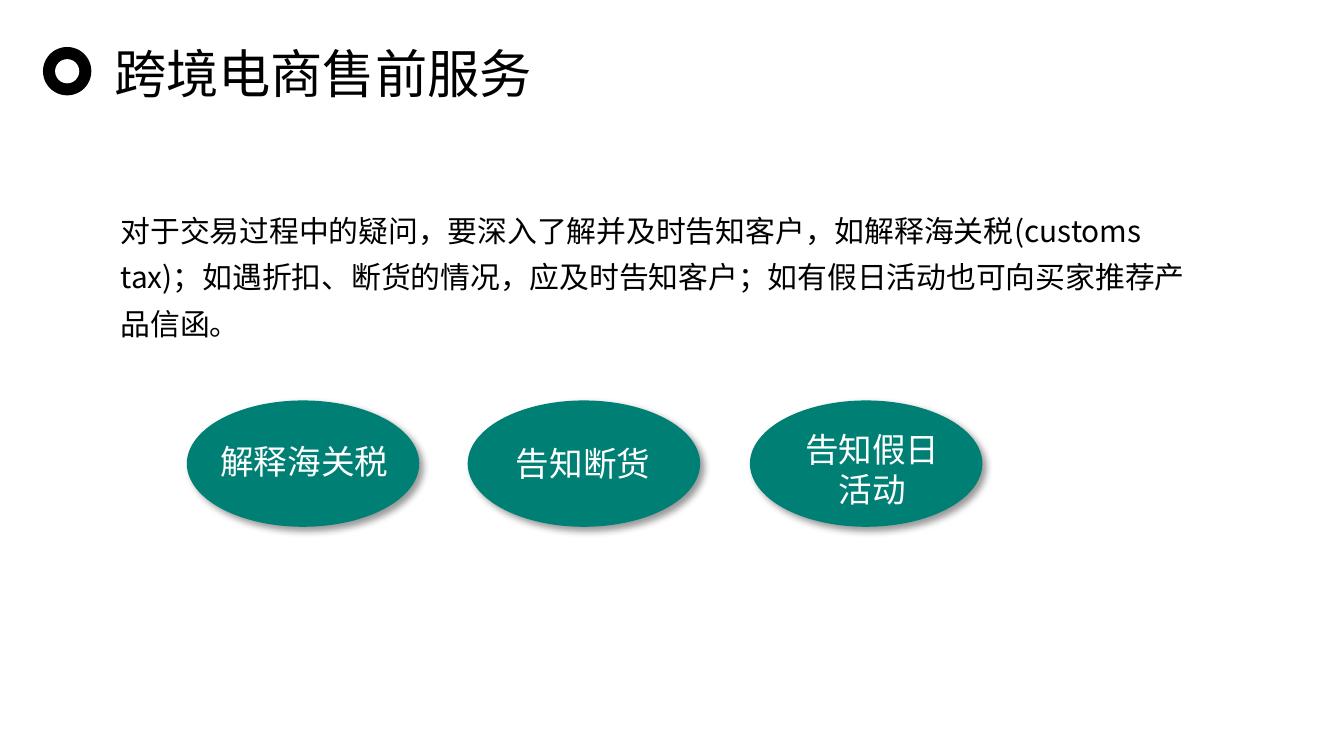
from lxml import etree
from pptx import Presentation
from pptx.dml.color import RGBColor
from pptx.enum.shapes import MSO_SHAPE
from pptx.enum.text import MSO_ANCHOR, MSO_AUTO_SIZE, PP_ALIGN
from pptx.oxml.ns import qn
from pptx.util import Inches, Pt

OVAL = MSO_SHAPE.OVAL
TOP = MSO_ANCHOR.TOP
FIXED = MSO_AUTO_SIZE.NONE
LEFT, MID = PP_ALIGN.LEFT, PP_ALIGN.CENTER
BLACK = RGBColor(0, 0, 0)
WHITE = RGBColor(255, 255, 255)
TEAL = RGBColor(0, 128, 117)
FACE = "Noto Sans CJK SC"
WIDE = Inches(10)
HIGH = WIDE * 9 // 16
COLS = 1000
CELL = WIDE // COLS

TITLE = "跨境电商售前服务"
BODY = (
    "对于交易过程中的疑问，要深入了解并及时告知客户，如解释海关税(customs tax)；"
    "如遇折扣、断货的情况，应及时告知客户；如有假日活动也可向买家推荐产品信函。"
)
TOPICS = [
    ("解释海关税", (15, 25, 149, 40), LEFT),
    ("告知断货", (26, 27, 124, 40), LEFT),
    ("告知假日活动", (29, 16, 124, 71), MID),
]


def shift(box, part):
    """Move a part, given in grid cells, to the corner of its box."""
    return box[0] + part[0], box[1] + part[1], part[2], part[3]


def scale(box):
    """Turn grid cells into slide lengths."""
    return [n * CELL for n in box]


def write(shape, text, size, color, align=LEFT, wrap=True, space=1.0):
    """Fill a shape with one styled paragraph."""
    frame = shape.text_frame
    frame.text = text
    para = frame.paragraphs[0]
    run = para.runs[0]
    formats = [
        (frame, {"word_wrap": wrap, "auto_size": FIXED, "vertical_anchor": TOP}),
        (para, {"alignment": align, "line_spacing": space}),
        (run.font, {"name": FACE, "size": Pt(size), "bold": False}),
        (run.font.color, {"rgb": color}),
    ]
    for part, values in formats:
        for key, value in values.items():
            setattr(part, key, value)
    etree.SubElement(run.font._element, qn("a:ea"), typeface=FACE)


def add_text(slide, box, *args, **style):
    """Add a text box over the given cells."""
    write(slide.shapes.add_textbox(*scale(box)), *args, **style)


def add_oval(slide, box, color):
    """Add a plain filled oval."""
    oval = slide.shapes.add_shape(OVAL, *scale(box))
    oval.shadow.inherit = False
    oval.fill.solid()
    oval.fill.fore_color.rgb = color
    oval.line.fill.background()
    return oval


def add_shade(shape):
    """Cast a soft shadow down and to the right."""
    effects = shape._element.spPr.find(qn("a:effectLst"))
    shade = etree.SubElement(
        effects, qn("a:outerShdw"), blurRad=str(Pt(4)), dist=str(Pt(3)),
        dir="2700000", algn="tl", rotWithShape="0",
    )
    tint = etree.SubElement(shade, qn("a:srgbClr"), val=str(BLACK))
    etree.SubElement(tint, qn("a:alpha"), val="40000")


def add_head(slide, box):
    """Place the ring and the slide title."""
    add_oval(slide, shift(box, (0, 9, 36, 36)), BLACK)
    add_oval(slide, shift(box, (9, 18, 18, 18)), WHITE)
    title = slide.shapes.title
    spot = scale(shift(box, (43, 0, 331, 57)))
    for key, value in zip(("left", "top", "width", "height"), spot):
        setattr(title, key, value)
    write(title, TITLE, 28, BLACK, wrap=False)


def add_topics(slide, box):
    """Place the topics as evenly spaced labelled ovals."""
    left, top, width, height = box
    wide = 173
    step = (width - wide) / (len(TOPICS) - 1)
    for i, (text, part, align) in enumerate(TOPICS):
        spot = (round(left + i * step), top, wide, height)
        add_shade(add_oval(slide, spot, TEAL))
        add_text(slide, shift(spot, part), text, 18, WHITE, align=align)


def main():
    """Build and save the slide."""
    deck = Presentation()
    deck.slide_width, deck.slide_height = WIDE, HIGH
    slide = deck.slides.add_slide(deck.slide_layouts[5])
    add_head(slide, (32, 26, 374, 57))
    add_text(slide, (80, 145, 817, 115), BODY, 16, BLACK, space=1.3)
    add_topics(slide, (139, 298, 592, 94))
    deck.save("out.pptx")


if __name__ == "__main__":
    main()
